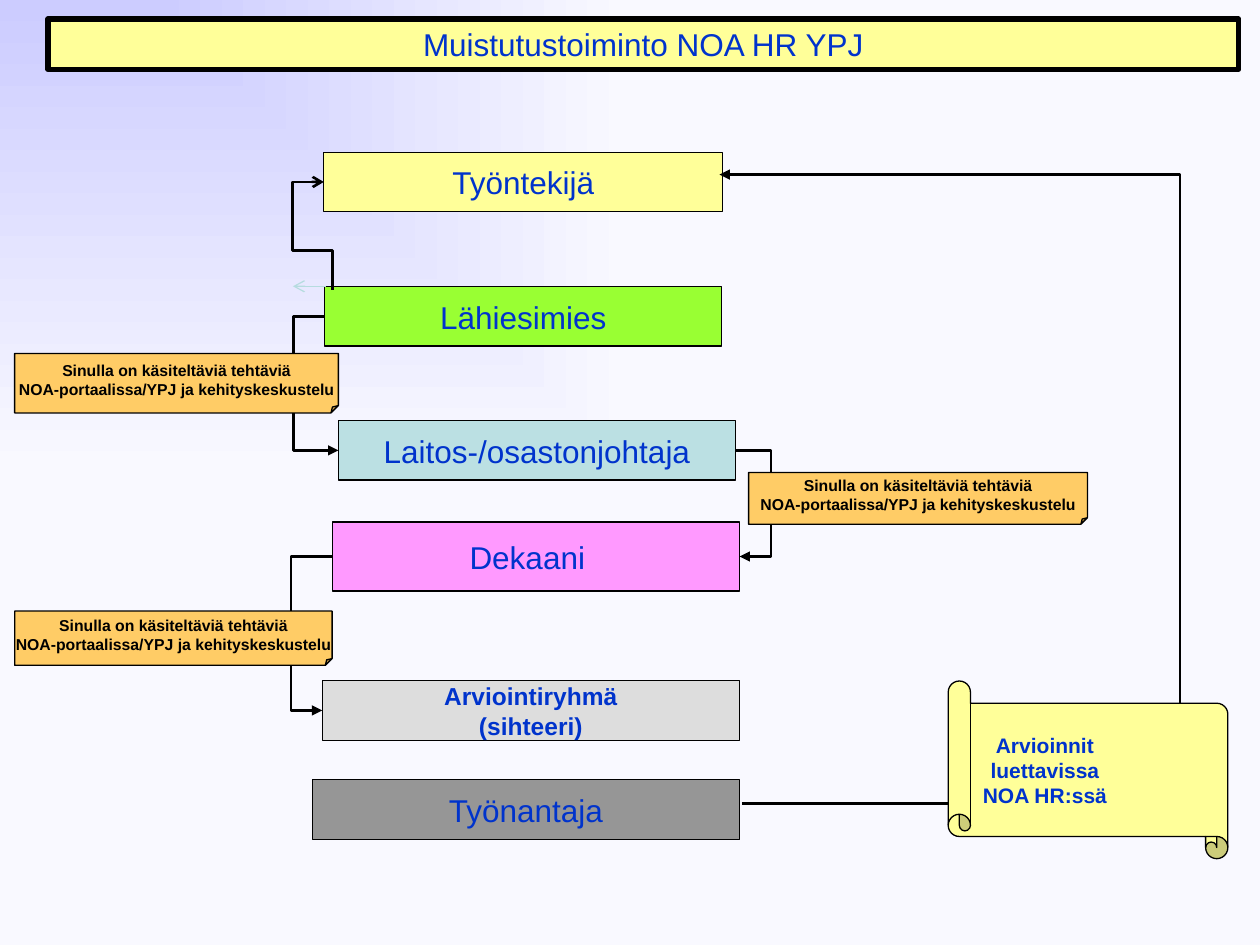
from lxml.etree import SubElement
from pptx import Presentation
from pptx.dml.color import RGBColor
from pptx.enum.shapes import MSO_CONNECTOR, MSO_SHAPE
from pptx.enum.text import MSO_ANCHOR, MSO_AUTO_SIZE, PP_ALIGN
from pptx.oxml.ns import qn
from pptx.util import Pt

HUES = {
    "ink": "0033CC", "black": "000000", "yellow": "FFFF99",
    "green": "99FF33", "teal": "BBE0E3", "pink": "FF99FF",
    "light": "DDDDDD", "gray": "969696", "orange": "FFCC66",
    "pale": "B6DCDF", "corner": "CCCCFF", "page": "F9F9FF",
}
TITLE = ("Muistutustoiminto NOA HR YPJ", (27.4, 10.8, 680.4, 28.8))

# name: (lines, fill, (left, top, width, height), text format)
ROLES = {
    "worker": (["Työntekijä"], "yellow", (185, 87, 228, 34), {}),
    "boss": (["Lähiesimies"], "green", (185.6, 163.8, 226.8, 34), {}),
    "head": (["Laitos-/osastonjohtaja"], "teal",
             (193.4, 240.4, 226.8, 34), {}),
    "dean": (["Dekaani"], "pink", (190, 298.2, 232.6, 39.6), {"right": 17}),
    "group": (["Arviointiryhmä", "(sihteeri)"], "light",
              (184.2, 389, 238.4, 34), {"size": 14, "bold": True}),
    "owner": (["Työnantaja"], "gray", (178.4, 445.6, 244.2, 34), {}),
}
# from, to, connection side, x of the vertical leg
STEPS = [
    ("boss", "head", 1, 167.6),
    ("head", "dean", 3, 440.4),
    ("dean", "group", 1, 166.3),
]
NOTE = ["Sinulla on käsiteltäviä tehtäviä",
        "NOA-portaalissa/YPJ ja kehityskeskustelu"]
NOTES = [(8.4, 202, 185, 34), (427.8, 270, 193.6, 29.6),
         (8.4, 349.2, 181.4, 31)]
SCROLL = (["Arvioinnit", "luettavissa", "NOA HR:ssä"],
          (571, 360, 101.5, 159.8))


def hue(name):
    return RGBColor.from_string(HUES[name])


def write(shape, lines, size=18, bold=False, color="ink", right=7.2,
          wrap=False):
    frame = shape.text_frame
    frame.auto_size = MSO_AUTO_SIZE.NONE
    frame.word_wrap = wrap
    frame.vertical_anchor = MSO_ANCHOR.MIDDLE
    frame.margin_right = Pt(right)
    for i, line in enumerate(lines):
        para = frame.paragraphs[0] if i == 0 else frame.add_paragraph()
        para.alignment = PP_ALIGN.CENTER
        run = para.add_run()
        run.text = line
        font = run.font
        font.name, font.size, font.bold = "Arial", Pt(size), bold
        font.color.rgb = hue(color)


def paint(shape, fill, width=0.75):
    shape.fill.solid()
    shape.fill.fore_color.rgb = hue(fill)
    shape.line.color.rgb = hue("black")
    shape.line.width = Pt(width)


def block(slide, kind, area, fill, lines, **form):
    shape = slide.shapes.add_shape(kind, *map(Pt, area))
    shape.shadow.inherit = False
    paint(shape, fill)
    write(shape, lines, **form)
    return shape


def adjust(shape, names, *ratios):
    """Set the named preset guides, as shares of the shape's size."""
    guides = shape.element.spPr.find(qn("a:prstGeom")).get_or_add_avLst()
    for name, ratio in zip(names, ratios):
        SubElement(guides, qn("a:gd"), name=name,
                   fmla=f"val {round(ratio * 100000)}")


def bend(line, *ratios):
    """Set where the legs of an elbow turn."""
    adjust(line, ("adj1", "adj2"), *ratios)


def arrow(slide, start, end, kind=MSO_CONNECTOR.ELBOW, color="black",
          width=1.5, tip="triangle"):
    line = slide.shapes.add_connector(kind, *map(Pt, start + end))
    line.line.color.rgb = hue(color)
    line.line.width = Pt(width)
    props = line.element.spPr
    SubElement(props.find(qn("a:ln")), qn("a:tailEnd"), type=tip)
    SubElement(props, qn("a:effectLst"))
    return line


def side(area, site):
    left, top, width, height = area
    return (left + (width if site == 3 else 0), top + height / 2)


def shade(slide):
    """Fade the background outward from the top left corner."""
    fill = slide.background.fill
    fill.gradient()
    for stop, name in zip(fill.gradient_stops, ("corner", "page")):
        stop.color.rgb = hue(name)
    grad = slide.element.find(".//" + qn("a:gradFill"))
    grad.remove(grad.find(qn("a:lin")))
    way = SubElement(grad, qn("a:path"), path="rect")
    SubElement(way, qn("a:fillToRect"), r="100000", b="100000")


def rise(slide, start, end, turn, leg):
    """Draw an arrow that leaves upward, turns left and ends rightward."""
    (x1, y1), (x2, y2) = start, end
    line = arrow(slide, start, end, tip="arrow")
    tall, wide = y1 - y2, x1 - x2
    line.left, line.top = Pt((x1 + x2 - tall) / 2), Pt((y1 + y2 - wide) / 2)
    line.width, line.height = Pt(tall), Pt(wide)
    props = line.element.spPr
    frame = props.find(qn("a:xfrm"))
    frame.attrib.pop("flipH", None)
    frame.set("rot", "16200000")
    frame.set("flipV", "1")
    props.find(qn("a:prstGeom")).set("prst", "bentConnector4")
    bend(line, (y1 - turn) / tall, (x1 - leg) / wide)


def main():
    deck = Presentation()
    deck.slide_width, deck.slide_height = Pt(720), Pt(540)
    slide = deck.slides.add_slide(deck.slide_layouts[5])
    shade(slide)

    text, area = TITLE
    title = slide.shapes.title
    title.left, title.top, title.width, title.height = map(Pt, area)
    paint(title, "yellow", 3)
    write(title, [text], wrap=True)

    boxes = {
        name: block(slide, MSO_SHAPE.RECTANGLE, area, fill, lines, **form)
        for name, (lines, fill, area, form) in ROLES.items()
    }
    for first, last, site, leg in STEPS:
        start, end = (side(ROLES[key][2], site) for key in (first, last))
        line = arrow(slide, start, end)
        line.begin_connect(boxes[first], site)
        line.end_connect(boxes[last], site)
        bend(line, (leg - start[0]) / (end[0] - start[0]))

    for area in NOTES:
        note = block(slide, MSO_SHAPE.FOLDED_CORNER, area, "orange", NOTE,
                     size=9, bold=True, color="black")
        adjust(note, ["adj"], 0.125)

    start, end, leg = (424, 459.2), (411.2, 99.8), 674.2
    bend(arrow(slide, start, end), (leg - start[0]) / (end[0] - start[0]))

    lines, area = SCROLL
    scroll = block(slide, MSO_SHAPE.VERTICAL_SCROLL, area, "yellow", lines,
                   size=12, bold=True)
    scroll.rotation = 270
    scroll.element.find(".//" + qn("a:bodyPr")).set("vert", "eaVert")

    arrow(slide, (186.2, 163.6), (167.4, 163.6), MSO_CONNECTOR.STRAIGHT,
          color="pale", width=0.75, tip="arrow")
    rise(slide, (190, 165.6), (185, 104), turn=143.3, leg=167)
    deck.save("out.pptx")


if __name__ == "__main__":
    main()
